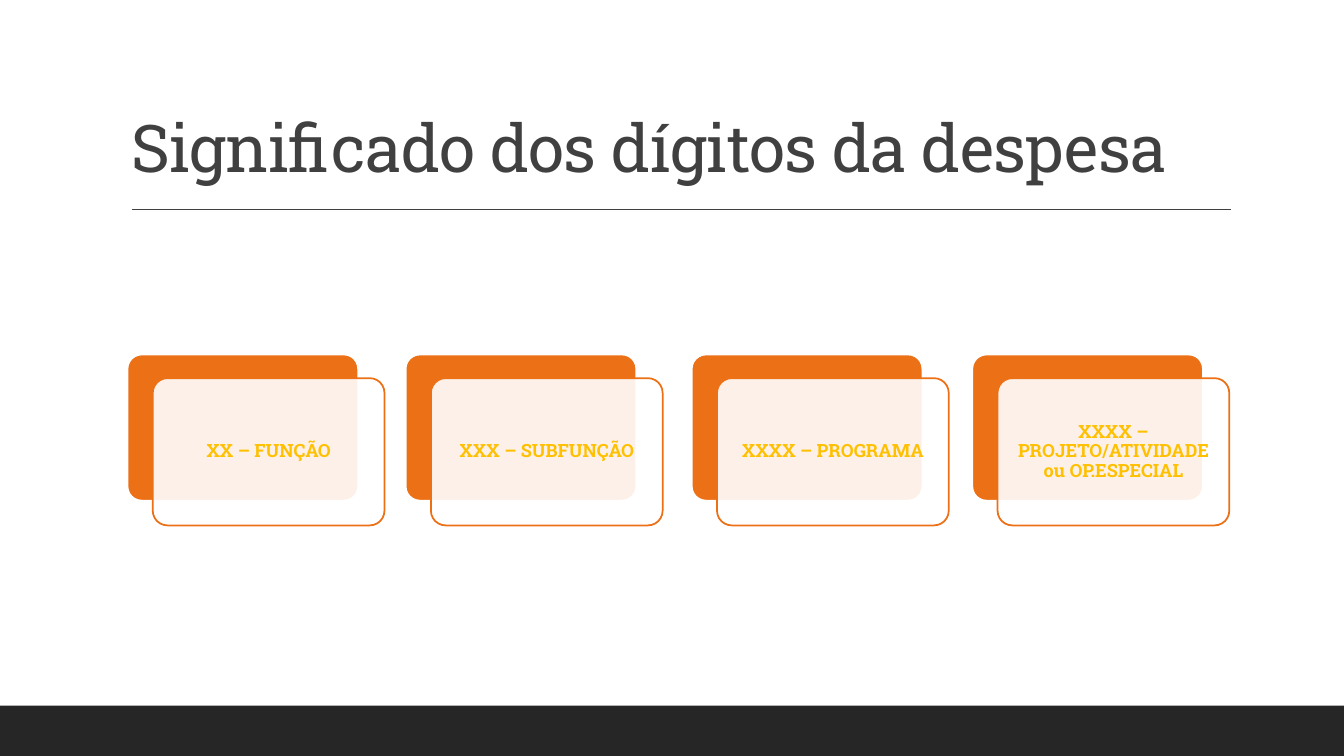
from dataclasses import dataclass

from lxml import etree
from pptx import Presentation
from pptx.dml.color import RGBColor
from pptx.enum.shapes import MSO_CONNECTOR, MSO_SHAPE
from pptx.enum.text import MSO_ANCHOR, MSO_AUTO_SIZE, PP_ALIGN
from pptx.oxml.ns import qn
from pptx.util import Cm, Pt

RECT = MSO_SHAPE.RECTANGLE
ROUND = MSO_SHAPE.ROUNDED_RECTANGLE
STRAIGHT = MSO_CONNECTOR.STRAIGHT
LEFT, CENTER = PP_ALIGN.LEFT, PP_ALIGN.CENTER
BOTTOM, MIDDLE = MSO_ANCHOR.BOTTOM, MSO_ANCHOR.MIDDLE
NO_FIT = MSO_AUTO_SIZE.NONE


@dataclass(frozen=True)
class Theme:
    font: str = "Roboto Slab"
    dark: RGBColor = RGBColor(0x26, 0x26, 0x26)
    gray: RGBColor = RGBColor(0x40, 0x40, 0x40)
    white: RGBColor = RGBColor(0xFF, 0xFF, 0xFF)
    orange: RGBColor = RGBColor(0xEC, 0x70, 0x16)
    gold: RGBColor = RGBColor(0xFF, 0xC0, 0x00)
    title: Pt = Pt(47)
    label: Pt = Pt(13)


THEME = Theme()
WIDTH, HEIGHT = Cm(33.87), Cm(19.05)
CARD_TOP, CARD_W, CARD_H = Cm(8.92), Cm(5.84), Cm(3.71)
SHIFT_X, SHIFT_Y = Cm(0.65), Cm(0.61)
INSET = Cm(0.13)
CARDS = [
    (Cm(3.2), "XX – FUNÇÃO"),
    (Cm(10.21), "XXX – SUBFUNÇÃO"),
    (Cm(17.42), "XXXX – PROGRAMA"),
    (Cm(24.49), "XXXX – PROJETO/ATIVIDADE ou OP.ESPECIAL"),
]


def write(frame, text, size, color, align, anchor):
    """Fill the frame with one styled paragraph and return its run."""
    frame.text = text
    frame.word_wrap = True
    frame.auto_size = NO_FIT
    frame.vertical_anchor = anchor
    para = frame.paragraphs[0]
    para.alignment = align
    para.line_spacing = 0.9
    run = para.runs[0]
    run.font.name = THEME.font
    run.font.size = size
    run.font.color.rgb = color
    return run


def add_title(slide, text):
    title = slide.shapes.title
    title.left, title.top = Cm(3.05), Cm(0.79)
    title.width, title.height = Cm(27.94), Cm(4.04)
    run = write(title.text_frame, text, THEME.title, THEME.gray, LEFT, BOTTOM)
    run._r.get_or_add_rPr().set("spc", "-50")


def add_rule(slide):
    y = Cm(5.28)
    rule = slide.shapes.add_connector(STRAIGHT, Cm(3.33), y, Cm(31.01), y)
    rule.line.color.rgb = THEME.gray
    rule.line.width = Pt(1)
    etree.SubElement(rule._element.spPr, qn("a:effectLst"))


def add_box(slide, kind, box, fill):
    shape = slide.shapes.add_shape(kind, *box)
    shape.shadow.inherit = False
    shape.fill.solid()
    shape.fill.fore_color.rgb = fill
    return shape


def add_band(slide):
    top = Cm(17.78)
    band = add_box(slide, RECT, (0, top, WIDTH, HEIGHT - top), THEME.dark)
    band.line.fill.background()


def add_panel(slide, left, top, fill, edge, weight):
    panel = add_box(slide, ROUND, (left, top, CARD_W, CARD_H), fill)
    panel.adjustments[0] = 0.1
    panel.line.color.rgb = edge
    panel.line.width = weight
    return panel


def set_alpha(shape, percent):
    color = shape._element.spPr.find(qn("a:solidFill"))[0]
    etree.SubElement(color, qn("a:alpha")).set("val", str(percent * 1000))


def add_card(slide, left, text):
    """Add an orange panel with a translucent, labelled panel over it."""
    add_panel(slide, left, CARD_TOP, THEME.orange, THEME.white, Pt(2))
    front = add_panel(slide, left + SHIFT_X, CARD_TOP + SHIFT_Y,
                      THEME.white, THEME.orange, Pt(1.25))
    set_alpha(front, 90)
    frame = front.text_frame
    frame.margin_left = frame.margin_right = INSET
    frame.margin_top = frame.margin_bottom = INSET
    run = write(frame, text, THEME.label, THEME.gold, CENTER, MIDDLE)
    run.font.bold = True


def main():
    deck = Presentation()
    deck.slide_width, deck.slide_height = WIDTH, HEIGHT
    slide = deck.slides.add_slide(deck.slide_layouts[5])
    add_band(slide)
    add_rule(slide)
    add_title(slide, "Significado dos dígitos da despesa")
    for left, text in CARDS:
        add_card(slide, left, text)
    deck.save("out.pptx")


if __name__ == "__main__":
    main()
